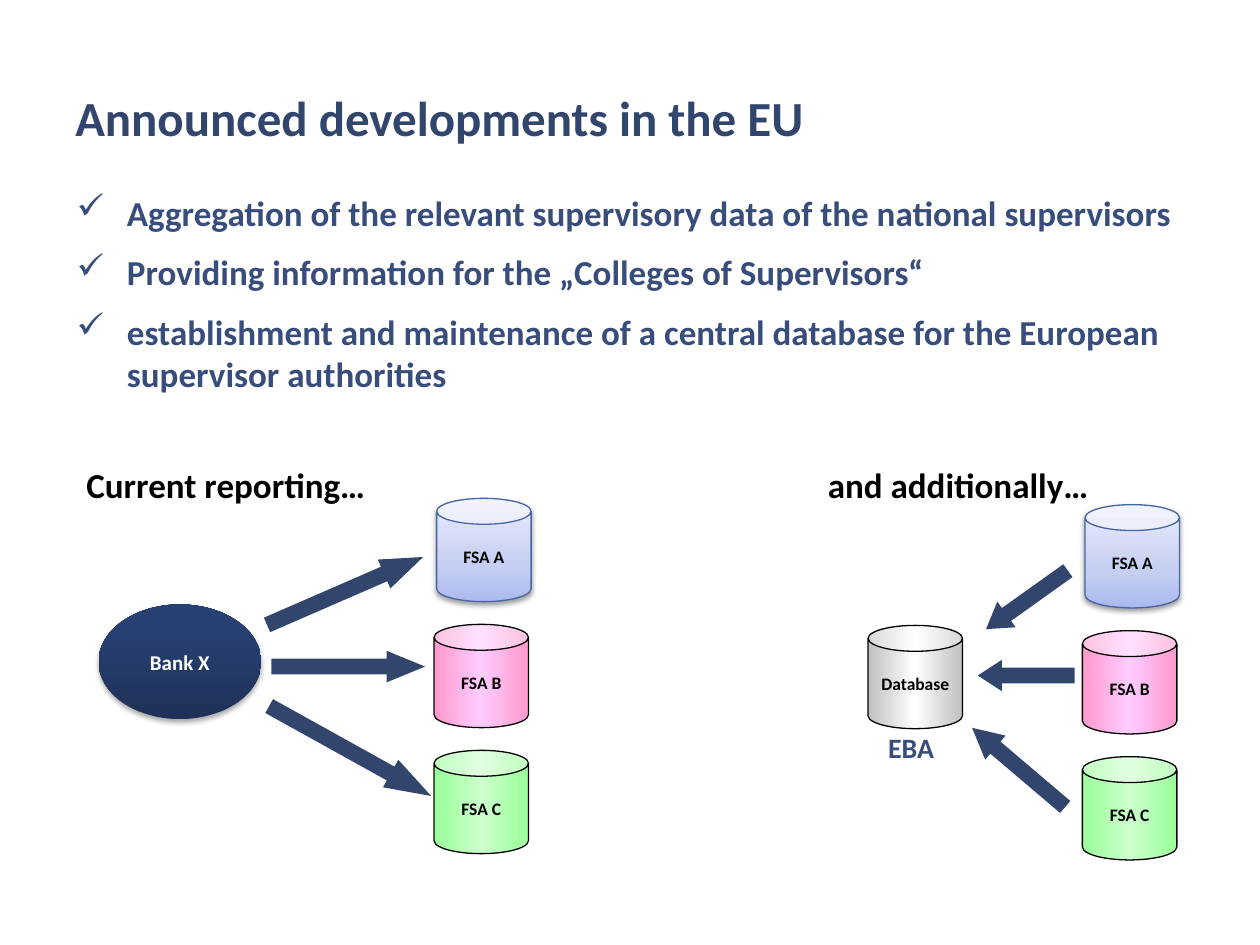
from math import atan2, degrees, hypot

from lxml.etree import SubElement
from pptx import Presentation
from pptx.dml.color import RGBColor
from pptx.enum.shapes import MSO_SHAPE
from pptx.enum.text import MSO_ANCHOR, PP_ALIGN
from pptx.oxml.ns import qn
from pptx.util import Pt

FONT = "Calibri"
COLORS = {"title": "32456D", "body": "384D7B", "arrow": "32456D", "black": "000000",
          "white": "FFFFFF", "blue_edge": "4764A3"}
GRADIENTS = {
    "blue": (270, [(0, "ABBAEE"), (35, "C5CFF2"), (100, "E8ECFB")]),
    "pink": (0, [(0, "FF99CC"), (50, "FFCCFF"), (100, "FF99CC")]),
    "green": (0, [(0, "99FF99"), (50, "CCFFCC"), (100, "99FF99")]),
    "grey": (0, [(0, "C0C0C0"), (50, "FFFFFF"), (100, "C0C0C0")]),
    "navy": (270, [(0, "1F3158"), (80, "284072"), (100, "274074")]),
}
CAN_WIDTH, CAN_HEIGHT, CAN_PITCH = 54, 59, 72
ARROW_THICKNESS = 18
AUTHORITIES = [("FSA A", "blue", 1.5), ("FSA B", "pink", 0), ("FSA C", "green", 0)]
GOALS = [
    "Aggregation of the relevant supervisory data of the national supervisors",
    "Providing information for the „Colleges of Supervisors“",
    "establishment and maintenance of a central database for the European supervisor authorities",
]


def rgb(name):
    return RGBColor.from_string(COLORS[name])


def add_run(paragraph, text, size, color):
    run = paragraph.add_run()
    run.text = text
    run.font.name, run.font.size, run.font.bold = FONT, Pt(size), True
    run.font.color.rgb = rgb(color)


def add_label(slide, box, text, size, color, anchor=MSO_ANCHOR.TOP):
    label = slide.shapes.add_textbox(*map(Pt, box))
    frame = label.text_frame
    frame.word_wrap, frame.vertical_anchor = True, anchor
    add_run(frame.paragraphs[0], text, size, color)


def add_gradient(shape, name):
    angle, stops = GRADIENTS[name]
    shape.fill.gradient()
    gradient = shape._element.spPr.find(qn("a:gradFill"))
    for child in list(gradient):
        gradient.remove(child)
    stop_list = SubElement(gradient, qn("a:gsLst"))
    for position, color in stops:
        stop = SubElement(stop_list, qn("a:gs"), pos=str(position * 1000))
        SubElement(stop, qn("a:srgbClr"), val=color)
    SubElement(gradient, qn("a:lin"), ang=str(angle * 60000), scaled="0")


def add_shadow(shape, opacity, distance):
    effects = shape._element.spPr.find(qn("a:effectLst"))
    shadow = SubElement(effects, qn("a:outerShdw"), blurRad=str(Pt(3.1)), dist=str(Pt(distance)),
                        dir=str(90 * 60000), rotWithShape="0")
    color = SubElement(shadow, qn("a:srgbClr"), val=COLORS["black"])
    SubElement(color, qn("a:alpha"), val=str(opacity * 1000))


def add_node(slide, preset, box, text, size, color, gradient):
    node = slide.shapes.add_shape(preset, *map(Pt, box))
    node.shadow.inherit = False
    add_gradient(node, gradient)
    frame = node.text_frame
    frame.word_wrap, frame.vertical_anchor = False, MSO_ANCHOR.MIDDLE
    frame.paragraphs[0].alignment = PP_ALIGN.CENTER
    add_run(frame.paragraphs[0], text, size, color)
    return node


def add_can(slide, left, top, text, gradient):
    can = add_node(slide, MSO_SHAPE.CAN, (left, top, CAN_WIDTH, CAN_HEIGHT), text, 10, "black", gradient)
    can.adjustments[0] = 0.274
    can.line.width = Pt(0.75)
    can.line.color.rgb = rgb("blue_edge" if gradient == "blue" else "black")
    if gradient == "blue":
        add_shadow(can, 38, 1.6)


def add_authorities(slide, left, top):
    for row, (name, gradient, shift) in enumerate(AUTHORITIES):
        add_can(slide, left + shift, top + row * CAN_PITCH, name, gradient)


def add_arrows(slide, left, top, routes):
    for x1, y1, x2, y2 in routes:
        length = hypot(x2 - x1, y2 - y1)
        arrow = slide.shapes.add_shape(
            MSO_SHAPE.RIGHT_ARROW,
            Pt(left + (x1 + x2 - length) / 2), Pt(top + (y1 + y2 - ARROW_THICKNESS) / 2),
            Pt(length), Pt(ARROW_THICKNESS))
        arrow.rotation = degrees(atan2(y2 - y1, x2 - x1)) % 360
        arrow.adjustments[1] = length / 4 / ARROW_THICKNESS
        arrow.shadow.inherit = False
        arrow.fill.solid()
        arrow.fill.fore_color.rgb = rgb("arrow")
        arrow.line.fill.background()


def add_goals(slide, box):
    goals = slide.shapes.add_textbox(*map(Pt, box))
    goals.fill.solid()
    goals.fill.fore_color.rgb = rgb("white")
    frame = goals.text_frame
    frame.word_wrap = True
    for index, goal in enumerate(GOALS):
        paragraph = frame.add_paragraph() if index else frame.paragraphs[0]
        paragraph.space_before = Pt(10)
        properties = paragraph._p.get_or_add_pPr()
        properties.set("marL", str(Pt(28.8)))
        properties.set("indent", str(-Pt(28.8)))
        SubElement(properties, qn("a:buChar"), char="✓")
        add_run(paragraph, goal, 20, "body")


def add_current_reporting(slide, box):
    left, top, width, height = box
    add_authorities(slide, left + 205.7, top + 23.4)
    bank = add_node(slide, MSO_SHAPE.OVAL, (left + 14, top + 84, 93, 65.5), "Bank X", 12, "white", "navy")
    bank.line.fill.background()
    add_shadow(bank, 35, 1.8)
    add_arrows(slide, left, top, [(110.3, 95.7, 199.5, 56.9),
                                  (112.8, 119.5, 200.6, 119.5),
                                  (111.5, 142.1, 204.1, 193.5)])
    add_label(slide, (left, top, width, 32), "Current reporting…", 20, "black")


def add_additional_reporting(slide, box):
    left, top, width, height = box
    add_authorities(slide, left + 152.5, top + 27)
    add_arrows(slide, left, top, [(144.2, 64.7, 97.4, 98.1),
                                  (148.1, 124.6, 92.7, 124.6),
                                  (142.7, 199.7, 89.5, 154.5)])
    add_can(slide, left + 30, top + 96, "Database", "grey")
    add_label(slide, (left, top, width, 32), "and additionally…", 20, "black")
    add_label(slide, (left + 34.4, top + 152.3, 51, 26.6), "EBA", 16, "body")


def main():
    presentation = Presentation()
    presentation.slide_width, presentation.slide_height = Pt(720), Pt(540)
    slide = presentation.slides.add_slide(presentation.slide_layouts[6])
    add_label(slide, (36, 21.6, 648, 90), "Announced developments in the EU", 28, "title", MSO_ANCHOR.MIDDLE)
    add_current_reporting(slide, (42.3, 261.4, 262, 228))
    add_additional_reporting(slide, (466, 261.4, 210, 230))
    add_goals(slide, (36.7, 105.8, 657.4, 128.2))
    presentation.save("out.pptx")


if __name__ == "__main__":
    main()
